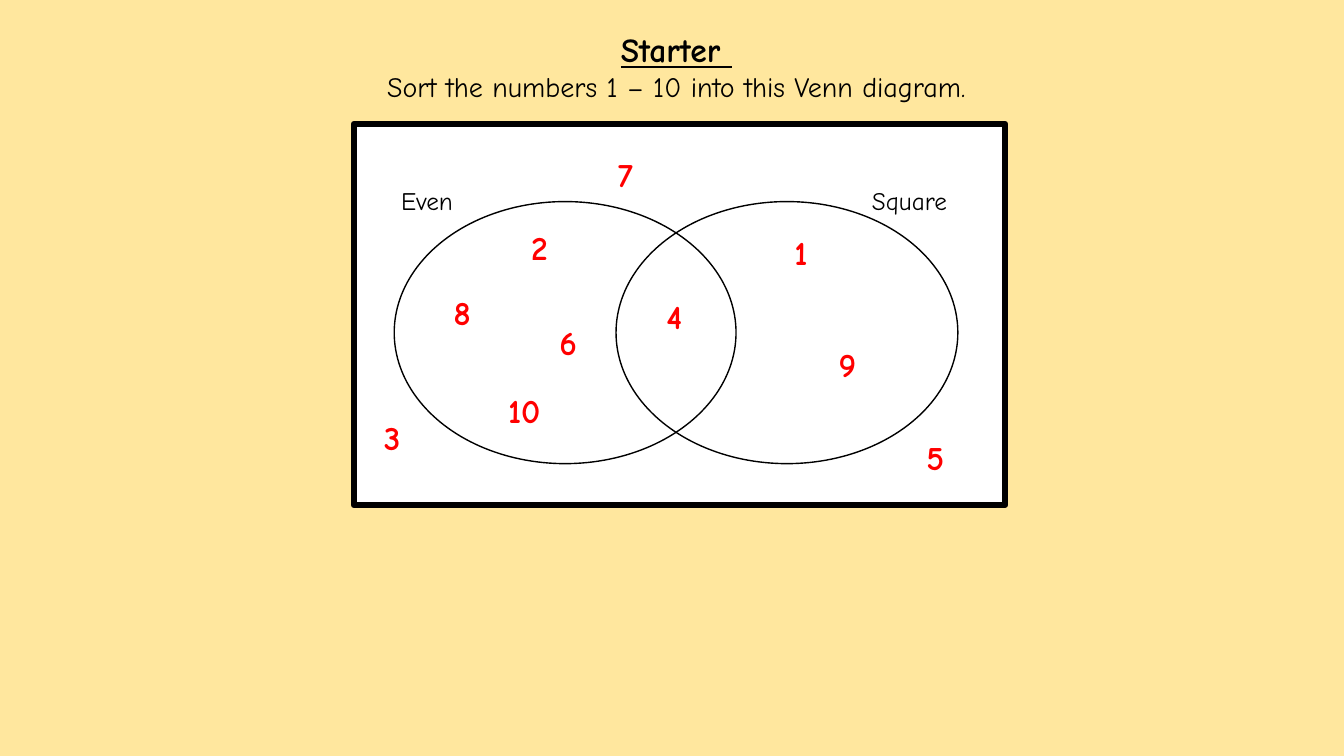
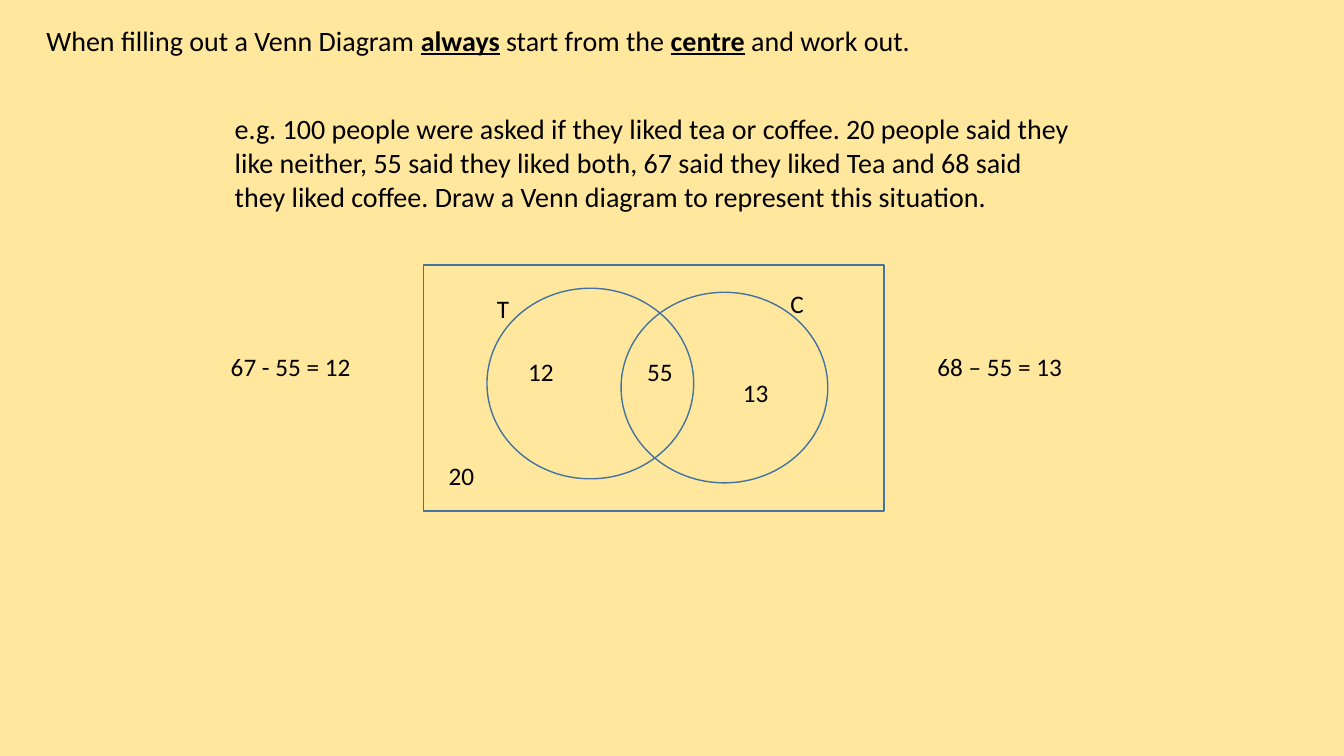
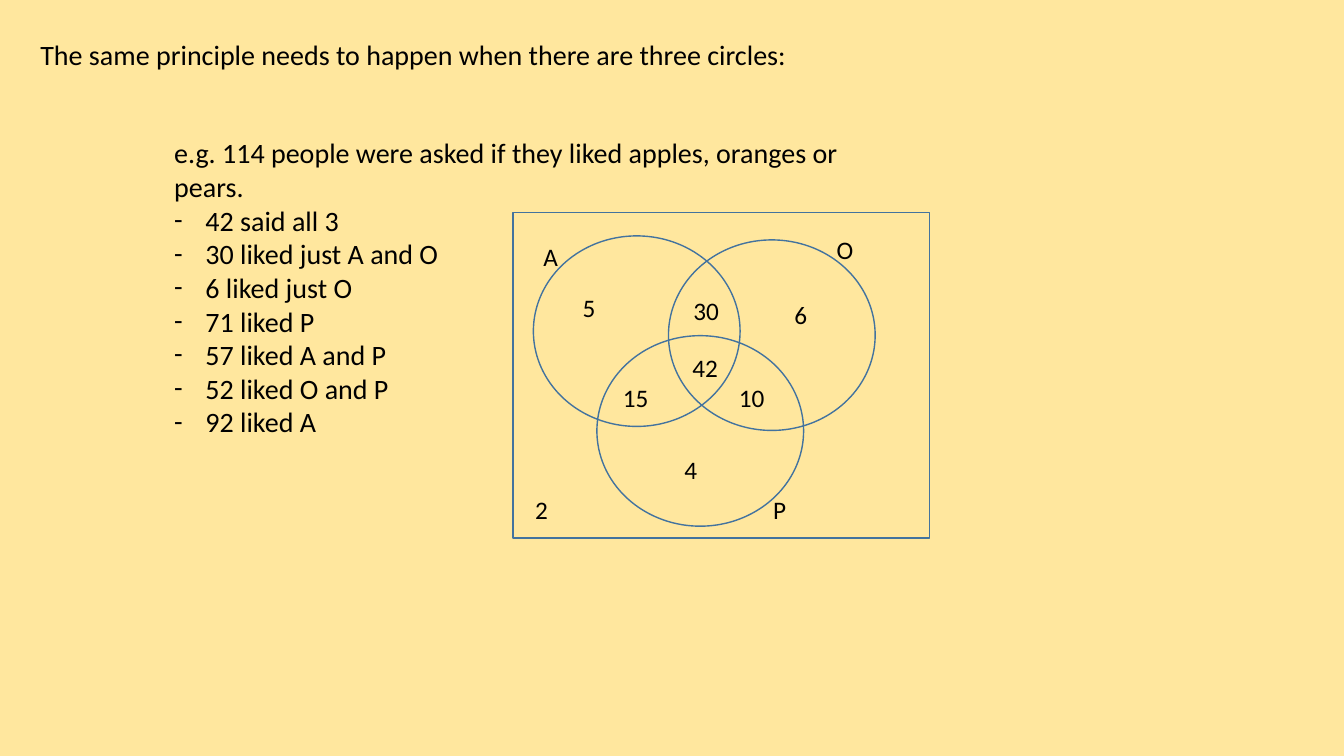
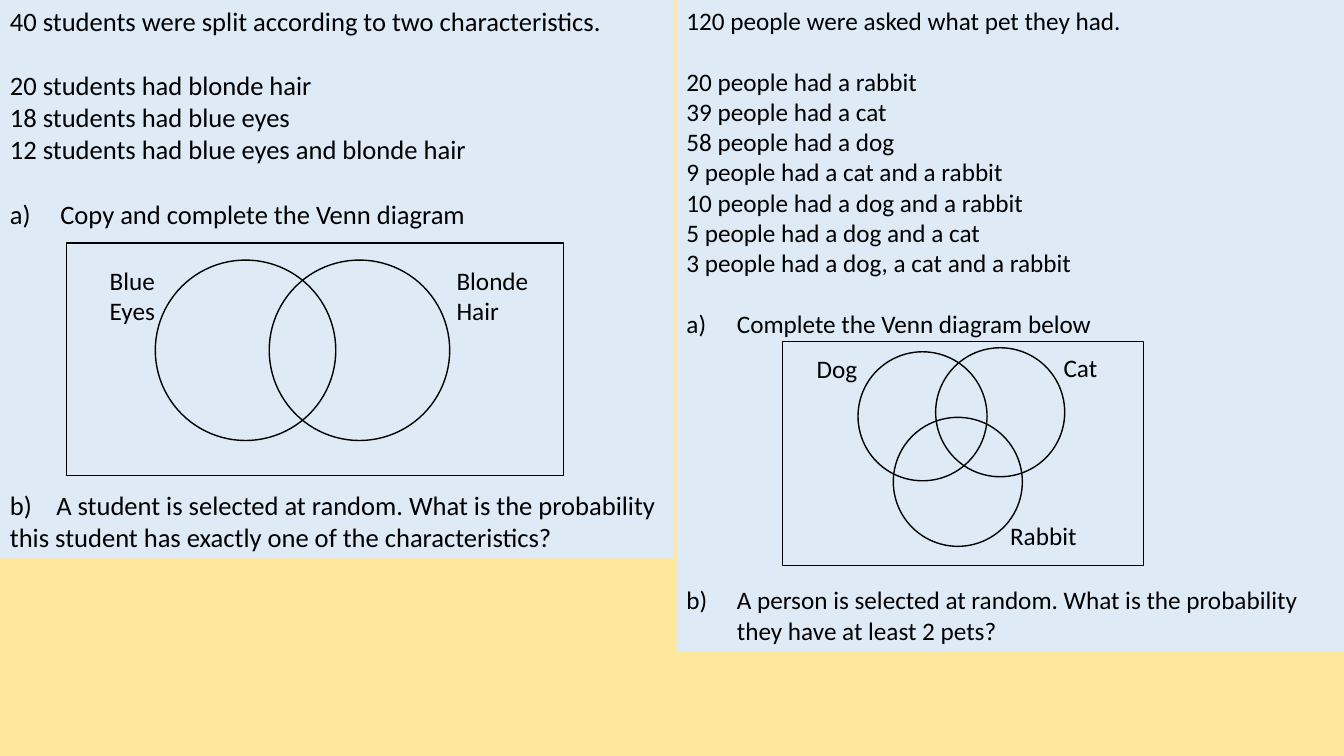
from dataclasses import dataclass
from typing import NamedTuple

from lxml import etree
from pptx import Presentation
from pptx.dml.color import RGBColor
from pptx.enum.shapes import MSO_SHAPE
from pptx.enum.text import MSO_ANCHOR, MSO_AUTO_SIZE, PP_ALIGN
from pptx.oxml.ns import qn
from pptx.slide import Slide
from pptx.text.text import TextFrame
from pptx.util import Inches, Pt

RECTANGLE = MSO_SHAPE.RECTANGLE
OVAL = MSO_SHAPE.OVAL
TOP = MSO_ANCHOR.TOP
NO_AUTOFIT = MSO_AUTO_SIZE.NONE
LEFT = PP_ALIGN.LEFT
CENTER = PP_ALIGN.CENTER

SAND = "FFE79E"
PANEL_BLUE = "DEEBF7"
OUTLINE_BLUE = "43739E"
BLACK = "000000"
WHITE = "FFFFFF"
RED = "FF0000"

BODY_FONT = "Calibri"
STARTER_FONT = "Comic Neue"
LINE_HEIGHT = 1.22
TITLE_ONLY, BLANK = 5, 6


class Box(NamedTuple):
    left: float
    top: float
    width: float
    height: float


class Run(NamedTuple):
    text: str
    strong: bool = False


class Label(NamedTuple):
    text: str
    left: float
    top: float
    width: float = 0.47
    height: float = 0.4


@dataclass(frozen=True)
class Paragraph:
    runs: tuple[Run, ...]
    lines_before: int = 0
    dash: bool = False
    lettered: bool = False
    indent: float = 0
    tab: float = 0


@dataclass(frozen=True)
class Venn:
    frame: Box
    circle_size: tuple[float, float]
    circle_corners: tuple[tuple[float, float], ...]
    labels: tuple[Label, ...]
    line: str = BLACK
    frame_width: float = 1
    frame_fill: str | None = None
    font: str = BODY_FONT


def line_of(text: str, **layout) -> Paragraph:
    return Paragraph((Run(text),), **layout)


def rgb(code: str) -> RGBColor:
    return RGBColor.from_string(code)


def inches(box: Box) -> tuple[Inches, ...]:
    return tuple(Inches(length) for length in box)


def add_marks(paragraph, content: Paragraph) -> None:
    properties = paragraph._p.get_or_add_pPr()
    if content.indent:
        properties.set("marL", str(Inches(content.indent)))
        properties.set("indent", str(-Inches(content.indent)))
    if content.dash:
        etree.SubElement(properties, qn("a:buFont"), typeface=BODY_FONT)
        etree.SubElement(properties, qn("a:buChar"), char="-")
    if content.lettered:
        etree.SubElement(properties, qn("a:buFont"), typeface=BODY_FONT)
        etree.SubElement(properties, qn("a:buAutoNum"), type="alphaLcParenR")
    if content.tab:
        tabs = etree.SubElement(properties, qn("a:tabLst"))
        etree.SubElement(tabs, qn("a:tab"), pos=str(Inches(content.tab)), algn="l")


def write_text(
    frame: TextFrame,
    paragraphs: list[Paragraph],
    *,
    size: float = 18,
    font: str = BODY_FONT,
    color: str = BLACK,
    bold: bool = False,
    align: PP_ALIGN = LEFT,
    wrap: bool = True,
) -> None:
    frame.word_wrap = wrap
    frame.auto_size = NO_AUTOFIT
    frame.vertical_anchor = TOP
    for index, content in enumerate(paragraphs):
        paragraph = frame.add_paragraph() if index else frame.paragraphs[0]
        add_marks(paragraph, content)
        paragraph.alignment = align
        if content.lines_before:
            paragraph.space_before = Pt(round(content.lines_before * size * LINE_HEIGHT, 1))
        for text, strong in content.runs:
            run = paragraph.add_run()
            run.text = text
            run.font.name = font
            run.font.size = Pt(size)
            run.font.color.rgb = rgb(color)
            run.font.bold = bold or strong
            run.font.underline = strong


def add_text(slide: Slide, box: Box, paragraphs: list[Paragraph],
             fill: str | None = None, **text_format) -> None:
    text_box = slide.shapes.add_textbox(*inches(box))
    if fill:
        text_box.fill.solid()
        text_box.fill.fore_color.rgb = rgb(fill)
    write_text(text_box.text_frame, paragraphs, **text_format)


def add_outline(slide: Slide, kind: MSO_SHAPE, box: Box, line: str,
                width: float = 1, fill: str | None = None) -> None:
    shape = slide.shapes.add_shape(kind, *inches(box))
    shape.shadow.inherit = False
    shape.line.color.rgb = rgb(line)
    shape.line.width = Pt(width)
    if fill:
        shape.fill.solid()
        shape.fill.fore_color.rgb = rgb(fill)
    else:
        shape.fill.background()


def add_labels(slide: Slide, labels: tuple[Label, ...], **text_format) -> None:
    for text, *box in labels:
        add_text(slide, Box(*box), [line_of(text)], **text_format)


def add_venn(slide: Slide, venn: Venn) -> None:
    add_outline(slide, RECTANGLE, venn.frame, venn.line, venn.frame_width, venn.frame_fill)
    for corner in venn.circle_corners:
        add_outline(slide, OVAL, Box(*corner, *venn.circle_size), venn.line)
    add_labels(slide, venn.labels, font=venn.font)


def add_titled_slide(deck, box: Box, title: Paragraph, **text_format) -> Slide:
    slide = deck.slides.add_slide(deck.slide_layouts[TITLE_ONLY])
    heading = slide.shapes.title
    heading.left, heading.top, heading.width, heading.height = inches(box)
    write_text(heading.text_frame, [title], **text_format)
    return slide


def build_starter(deck) -> None:
    slide = add_titled_slide(
        deck, Box(3.01, 0.24, 7.4, 0.5), Paragraph((Run("Starter ", True),)),
        size=24, font=STARTER_FONT, align=CENTER,
    )
    add_text(
        slide, Box(3.01, 0.64, 7.4, 0.44),
        [line_of("Sort the numbers 1 – 10 into this Venn diagram.")],
        size=20, font=STARTER_FONT, align=CENTER,
    )
    add_venn(slide, Venn(
        frame=Box(3.51, 1.23, 6.46, 3.78),
        circle_size=(3.39, 2.6),
        circle_corners=((3.91, 2), (6.11, 2)),
        labels=(Label("Even", 3.88, 1.79, 1.1), Label("Square", 8.55, 1.79, 1.89)),
        frame_width=4.5,
        frame_fill=WHITE,
        font=STARTER_FONT,
    ))
    number_corners = (
        (7.78, 2.25), (5.17, 2.2), (3.71, 4.09), (6.51, 2.89), (9.09, 4.29),
        (5.45, 3.14), (6.03, 1.48), (4.4, 2.85), (8.22, 3.36), (4.94, 3.82),
    )
    answers = tuple(
        Label(str(number), *corner, 0.41 if number < 10 else 0.61, 0.5)
        for number, corner in enumerate(number_corners, start=1)
    )
    add_labels(slide, answers, size=24, font=STARTER_FONT, color=RED, bold=True, wrap=False)


def build_two_circles(deck) -> None:
    rule = Paragraph((
        Run("When filling out a Venn Diagram "), Run("always", True),
        Run(" start from the "), Run("centre", True), Run(" and work out."),
    ))
    slide = add_titled_slide(deck, Box(0.36, 0.18, 8.93, 0.44), rule, size=20)
    add_text(slide, Box(2.23, 1.06, 8.5, 1.11), [line_of(
        "e.g. 100 people were asked if they liked tea or coffee. 20 people said they "
        "like neither, 55 said they liked both, 67 said they liked Tea and 68 said "
        "they liked coffee. Draw a Venn diagram to represent this situation."
    )], size=20)
    add_venn(slide, Venn(
        frame=Box(4.2, 2.63, 4.57, 2.44),
        circle_size=(2.05, 1.89),
        circle_corners=((4.83, 2.86), (6.16, 2.9)),
        labels=(
            Label("T", 4.83, 2.86), Label("C", 7.74, 2.81),
            Label("55", 6.32, 3.49), Label("20", 4.35, 4.52, 0.71),
            Label("12", 5.14, 3.49, 0.79), Label("13", 7.27, 3.69, 0.71),
            Label("67 - 55 = 12", 2.19, 3.44, 1.52),
            Label("68 – 55 = 13", 9.2, 3.44, 1.7),
        ),
        line=OUTLINE_BLUE,
    ))


def build_three_circles(deck) -> None:
    slide = add_titled_slide(
        deck, Box(0.3, 0.32, 9.59, 0.44),
        line_of("The same principle needs to happen when there are three circles:"), size=20,
    )
    findings = (
        "42 said all 3", "30 liked just A and O", "6 liked just O", "71 liked P",
        "57 liked A and P", "52 liked O and P", "92 liked A",
    )
    add_text(slide, Box(1.63, 1.3, 6.93, 3.47), [
        line_of("e.g. 114 people were asked if they liked apples, oranges or pears."),
        *(line_of(finding, dash=True, indent=0.31) for finding in findings),
    ], size=20)
    add_venn(slide, Venn(
        frame=Box(5.09, 2.11, 4.13, 3.23),
        circle_size=(2.05, 1.89),
        circle_corners=((5.29, 2.34), (6.63, 2.38), (5.92, 3.33)),
        labels=(
            Label("A", 5.29, 2.34), Label("O", 8.2, 2.28), Label("P", 7.57, 4.86),
            Label("30", 6.78, 2.88), Label("2", 5.21, 4.86), Label("5", 5.68, 2.85),
            Label("6", 7.78, 2.92), Label("42", 6.77, 3.45), Label("15", 6.08, 3.74),
            Label("10", 7.23, 3.74), Label("4", 6.69, 4.46),
        ),
        line=OUTLINE_BLUE,
    ))


def build_questions(deck) -> None:
    slide = deck.slides.add_slide(deck.slide_layouts[BLANK])
    add_text(slide, Box(0, 0, 6.68, 5.54), [
        line_of("40 students were split according to two characteristics."),
        line_of("20 students had blonde hair", lines_before=1),
        line_of("18 students had blue eyes"),
        line_of("12 students had blue eyes and blonde hair"),
        line_of("Copy and complete the Venn diagram", lines_before=1, lettered=True, indent=0.5),
        line_of(
            "b)\tA student is selected at random. What is the probability "
            "this student has exactly one of the characteristics?",
            lines_before=8, tab=0.46,
        ),
    ], fill=PANEL_BLUE, size=19)
    add_text(slide, Box(6.71, 0, 6.62, 6.46), [
        line_of("120 people were asked what pet they had."),
        line_of("20 people had a rabbit", lines_before=1),
        line_of("39 people had a cat"),
        line_of("58 people had a dog"),
        line_of("9 people had a cat and a rabbit"),
        line_of("10 people had a dog and a rabbit"),
        line_of("5 people had a dog and a cat"),
        line_of("3 people had a dog, a cat and a rabbit"),
        line_of("Complete the Venn diagram below", lines_before=1, lettered=True, indent=0.5),
        line_of(
            "A person is selected at random. What is the probability they have at least 2 pets?",
            lines_before=8, lettered=True, indent=0.5,
        ),
    ], fill=PANEL_BLUE)
    add_venn(slide, Venn(
        frame=Box(0.66, 2.41, 4.93, 2.31),
        circle_size=(1.79, 1.79),
        circle_corners=((1.54, 2.58), (2.67, 2.58)),
        labels=(
            Label("Blue Eyes", 0.99, 2.58, 0.96, 0.71),
            Label("Blonde Hair", 4.43, 2.58, 0.96, 0.71),
        ),
    ))
    add_venn(slide, Venn(
        frame=Box(7.76, 3.39, 3.58, 2.22),
        circle_size=(1.28, 1.28),
        circle_corners=((8.51, 3.49), (9.28, 3.45), (8.86, 4.14)),
        labels=(
            Label("Dog", 8, 3.46, 0.85), Label("Cat", 10.45, 3.45, 0.85),
            Label("Rabbit", 9.92, 5.11, 1.06),
        ),
    ))


def main() -> None:
    deck = Presentation()
    deck.slide_width, deck.slide_height = Inches(13.33), Inches(7.5)
    backdrop = deck.slide_master.background.fill
    backdrop.solid()
    backdrop.fore_color.rgb = rgb(SAND)
    for build in (build_starter, build_two_circles, build_three_circles, build_questions):
        build(deck)
    deck.save("out.pptx")


if __name__ == "__main__":
    main()
